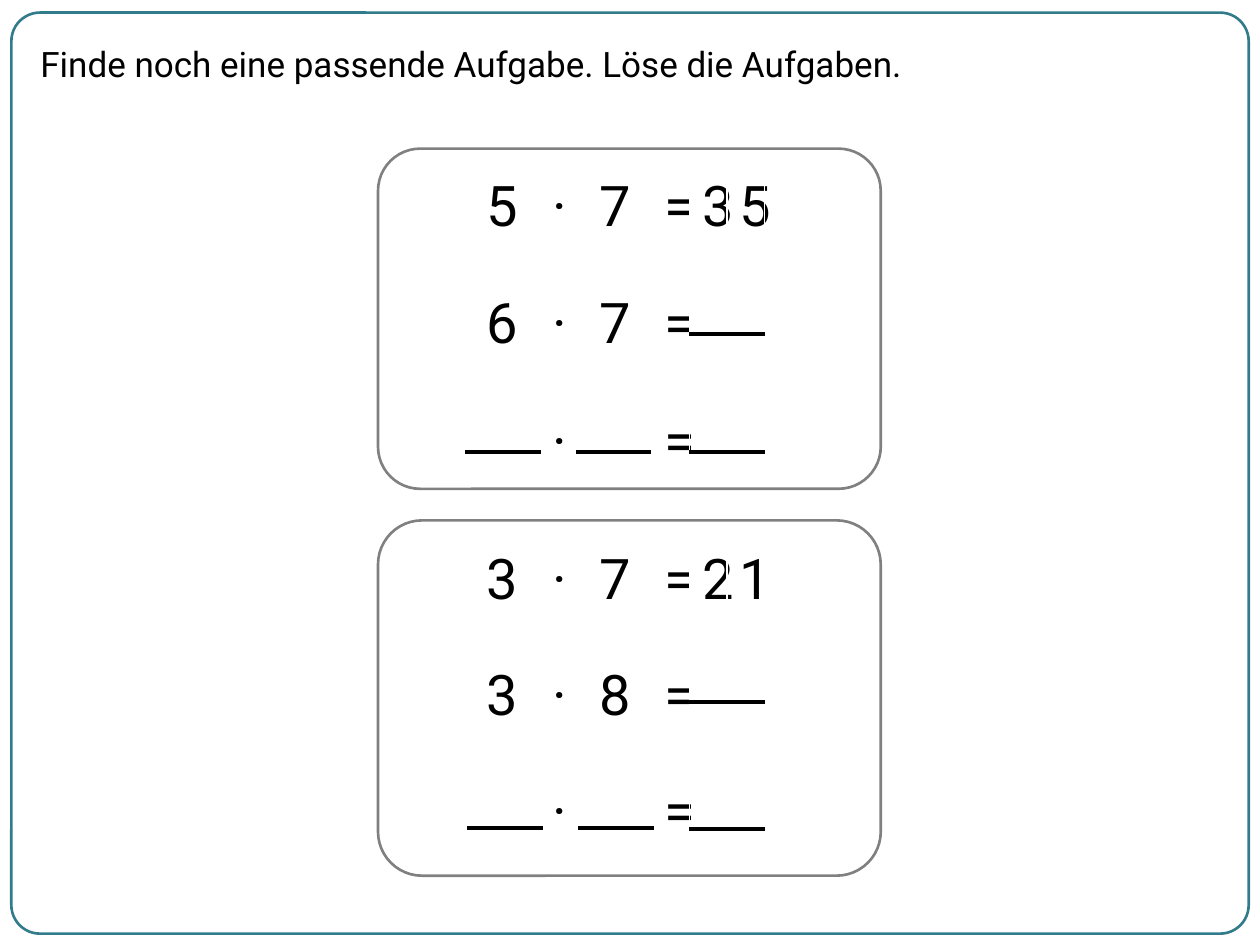
import pptx
import pptx.util
import pptx.dml.color
import pptx.enum.shapes
import pptx.enum.text
import pptx.oxml

Inches = pptx.util.Inches
Pt = pptx.util.Pt
RGBColor = pptx.dml.color.RGBColor
Anchor = pptx.enum.text.MSO_ANCHOR
Align = pptx.enum.text.PP_ALIGN

BLACK = RGBColor(0x00, 0x00, 0x00)
GRAY = RGBColor(0x80, 0x80, 0x80)
TEAL = RGBColor(0x32, 0x7B, 0x8A)

FONT = "Roboto"
LEFT = 3.69
UNIT = 2.38 / 8
ROW = 0.63
BLANK = 0.6
SOLVED = (2, 1, 2, 1, 1, 1)  # column widths in units
OPEN = (1,) * 8


def add_run(para, text, size):
    run = para.add_run()
    run.text = text
    run.font.name = FONT
    run.font.size = Pt(size)
    run.font.bold = False
    run.font.color.rgb = BLACK


def add_title(slide, text):
    title = slide.shapes.title
    title.left, title.top = Inches(0.22), Inches(0.29)
    title.width, title.height = Inches(8.44), Inches(0.44)
    frame = title.text_frame
    frame.word_wrap = True
    frame.auto_size = pptx.enum.text.MSO_AUTO_SIZE.SHAPE_TO_FIT_TEXT
    frame.vertical_anchor = Anchor.TOP
    para = frame.paragraphs[0]
    para.alignment = Align.LEFT
    add_run(para, text, 20)


def add_box(slide, left, top, width, height, round_by, color):
    kind = pptx.enum.shapes.MSO_SHAPE.ROUNDED_RECTANGLE
    box = slide.shapes.add_shape(
        kind, Inches(left), Inches(top), Inches(width), Inches(height))
    box.adjustments[0] = round_by
    box.shadow.inherit = False
    box.fill.background()
    box.line.color.rgb = color
    box.line.width = Pt(1.5)


def add_task(slide, top, signs, units, anchor=Anchor.MIDDLE):
    """Add one sum as a table row, with one sign in each cell."""
    table = slide.shapes.add_table(
        1, len(units), Inches(LEFT), Inches(top),
        Inches(UNIT * sum(units)), Inches(ROW)).table
    table.first_row = False
    table.horz_banding = False
    for col, unit in zip(table.columns, units):
        col.width = Inches(UNIT * unit)
    for cell, sign in zip(table.rows[0].cells, signs):
        cell.fill.background()
        cell.vertical_anchor = anchor
        if sign:
            para = cell.text_frame.paragraphs[0]
            para.alignment = Align.CENTER
            add_run(para, sign, 32)


def add_blank(slide, left, top):
    """Draw a line to write an answer on."""
    line = slide.shapes.add_connector(
        pptx.enum.shapes.MSO_CONNECTOR.STRAIGHT,
        Inches(left), Inches(top), Inches(left + BLANK), Inches(top))
    line.line.color.rgb = BLACK
    line.line.width = Pt(2.25)
    props = line._element.spPr
    props.append(pptx.oxml.parse_xml(
        '<a:effectLst xmlns:a='
        '"http://schemas.openxmlformats.org/drawingml/2006/main"/>'))


def main():
    deck = pptx.Presentation()
    deck.slide_width, deck.slide_height = Inches(10), Inches(7.5)
    slide = deck.slides.add_slide(deck.slide_layouts[5])

    add_title(slide, "Finde noch eine passende Aufgabe. Löse die Aufgaben.")
    add_box(slide, 0.09, 0.1, 9.82, 7.31, 0.031, TEAL)
    for top, height in ((1.18, 2.7), (4.13, 2.82)):
        add_box(slide, 3, top, 3.99, height, 0.124, GRAY)

    add_task(slide, 1.33, ("5", "·", "7", "=", "3", "5"), SOLVED)
    add_task(slide, 2.26, ("6", "·", "7", "=", "", ""), SOLVED)
    add_task(slide, 4.28, ("3", "·", "7", "=", "2", "1"), SOLVED,
             Anchor.BOTTOM)
    add_task(slide, 5.21, ("3", "·", "8", "=", "", ""), SOLVED)
    for top in (3.19, 6.13):
        add_task(slide, top, ("", "", "·", "", "", "=", "", ""), OPEN)

    for top in (2.65, 3.59, 5.57, 6.58):
        add_blank(slide, 5.47, top)
    for left, top in ((3.69, 3.59), (3.71, 6.57)):
        add_blank(slide, left, top)
        add_blank(slide, left + 0.88, top)

    deck.save("out.pptx")


if __name__ == "__main__":
    main()
